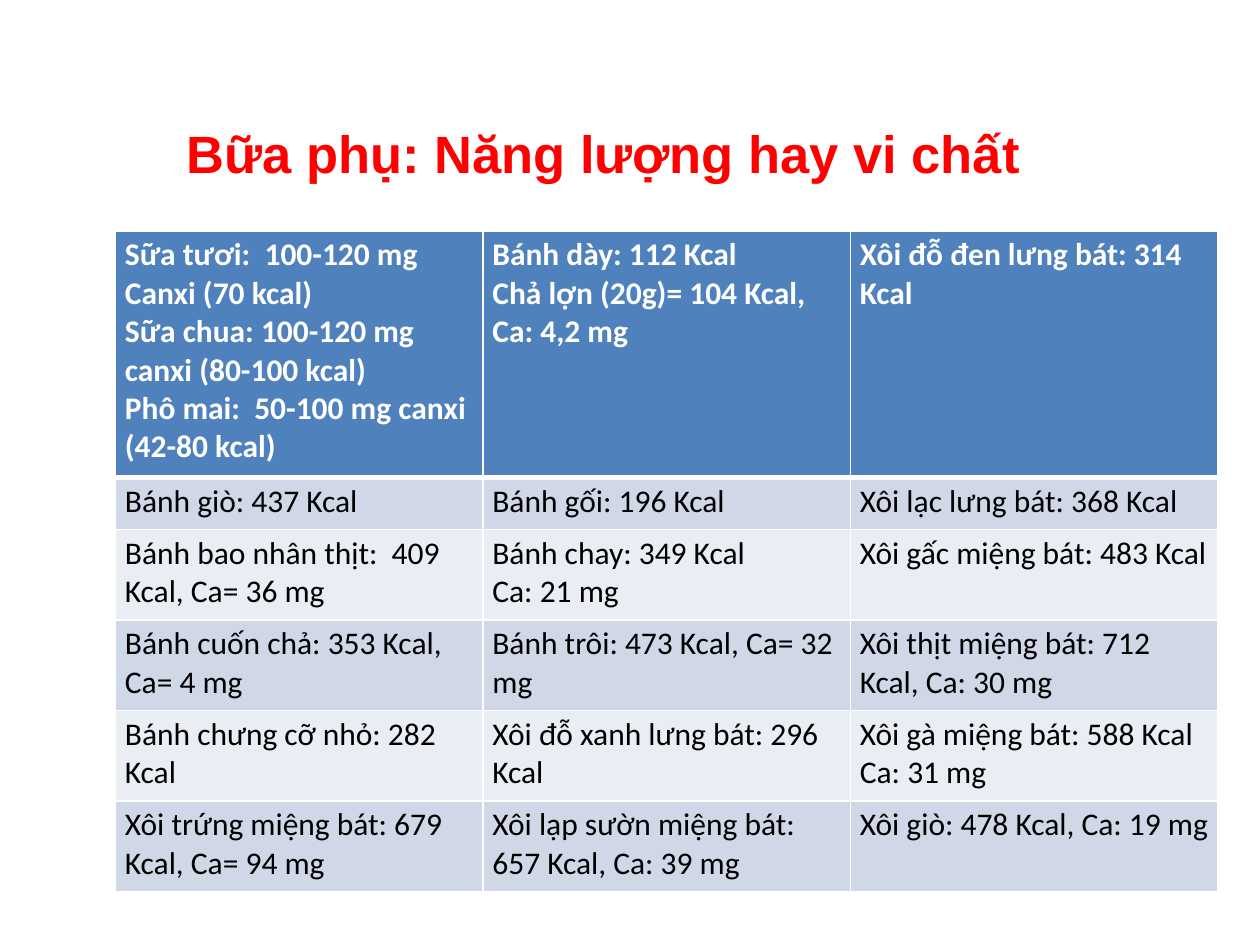
from lxml.etree import SubElement
from pptx import Presentation
from pptx.dml.color import RGBColor
from pptx.enum.text import MSO_ANCHOR, PP_ALIGN
from pptx.oxml.ns import qn
from pptx.util import Pt

TITLE = "Bữa phụ: Năng lượng hay vi chất"
# One list per row; each line in a cell is its own paragraph.
FOODS = [
    ["Sữa tươi:  100-120 mg Canxi (70 kcal)\n"
     "Sữa chua: 100-120 mg canxi (80-100 kcal)\n"
     "Phô mai:  50-100 mg canxi (42-80 kcal)",
     "Bánh dày: 112 Kcal\nChả lợn (20g)= 104 Kcal, Ca: 4,2 mg",
     "Xôi đỗ đen lưng bát: 314 Kcal"],
    ["Bánh giò: 437 Kcal", "Bánh gối: 196 Kcal", "Xôi lạc lưng bát: 368 Kcal"],
    ["Bánh bao nhân thịt:  409 Kcal, Ca= 36 mg",
     "Bánh chay: 349 Kcal\nCa: 21 mg",
     "Xôi gấc miệng bát: 483 Kcal"],
    ["Bánh cuốn chả: 353 Kcal, Ca= 4 mg",
     "Bánh trôi: 473 Kcal, Ca= 32 mg",
     "Xôi thịt miệng bát: 712 Kcal, Ca: 30 mg"],
    ["Bánh chưng cỡ nhỏ: 282 Kcal",
     "Xôi đỗ xanh lưng bát: 296 Kcal",
     "Xôi gà miệng bát: 588 Kcal\nCa: 31 mg"],
    ["Xôi trứng miệng bát: 679 Kcal, Ca= 94 mg",
     "Xôi lạp sườn miệng bát: 657 Kcal, Ca: 39 mg",
     "Xôi giò: 478 Kcal, Ca: 19 mg"],
]
HEIGHTS = [141, 29.5] + [51.8] * 4
WIDTH = 210
HEAD, BANDS = "4F81BD", ("E9EDF4", "D0D8E8")


def color(code):
    return RGBColor.from_string(code)


def add_run(para, text, name, size, code, bold):
    run = para.add_run()
    run.text = text
    font = run.font
    font.name, font.size, font.bold = name, Pt(size), bold
    font.color.rgb = color(code)


def add_edges(cell, top, bottom):
    """Draw white cell borders; must come before the cell fill."""
    props = cell._tc.get_or_add_tcPr()
    for side, width in zip("LRTB", (1, 1, top, bottom)):
        line = SubElement(props, qn(f"a:ln{side}"), w=str(Pt(width)))
        fill = SubElement(line, qn("a:solidFill"))
        SubElement(fill, qn("a:srgbClr"), val="FFFFFF")


def fill_cell(cell, text, row):
    head = row == 0
    add_edges(cell, 3 if row == 1 else 1, 3 if head else 1)
    cell.fill.solid()
    cell.fill.fore_color.rgb = color(HEAD if head else BANDS[row % 2])
    cell.margin_left = cell.margin_right = Pt(5.4)
    cell.margin_top = cell.margin_bottom = Pt(2.7)
    frame = cell.text_frame
    for i, line in enumerate(text.split("\n")):
        para = frame.add_paragraph() if i else frame.paragraphs[0]
        add_run(para, line, "Calibri", 18, "FFFFFF" if head else "000000", head)


def add_title(slide):
    title = slide.shapes.title
    title.left, title.top = Pt(54), Pt(42)
    title.width, title.height = Pt(582), Pt(90)
    frame = title.text_frame
    frame.vertical_anchor = MSO_ANCHOR.MIDDLE
    para = frame.paragraphs[0]
    para.alignment = PP_ALIGN.CENTER
    add_run(para, TITLE, "Arial", 30, "FF0000", True)


def add_foods(slide):
    cols = len(FOODS[0])
    table = slide.shapes.add_table(
        len(FOODS), cols, Pt(66), Pt(132), Pt(WIDTH * cols), Pt(sum(HEIGHTS))
    ).table
    for col in table.columns:
        col.width = Pt(WIDTH)
    for r, (foods, height) in enumerate(zip(FOODS, HEIGHTS)):
        table.rows[r].height = Pt(height)
        for c, text in enumerate(foods):
            fill_cell(table.cell(r, c), text, r)


def main():
    deck = Presentation()
    deck.slide_width, deck.slide_height = Pt(720), Pt(540)
    slide = deck.slides.add_slide(deck.slide_layouts[5])
    add_title(slide)
    add_foods(slide)
    deck.save("out.pptx")


if __name__ == "__main__":
    main()
